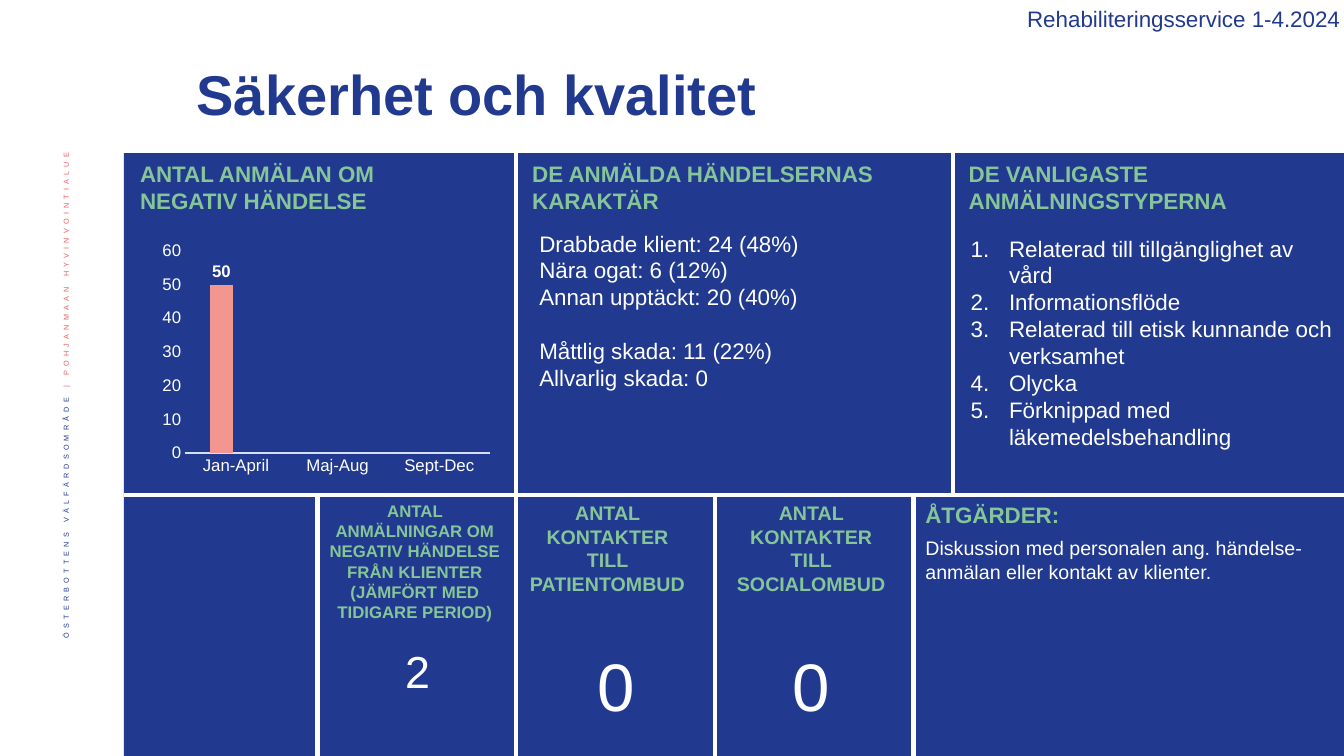
from dataclasses import dataclass
from pptx import Presentation
from pptx.chart.data import CategoryChartData as Data
from pptx.dml.color import RGBColor as RGB
from pptx.enum.chart import XL_CHART_TYPE as Kind, XL_LABEL_POSITION as Pos
from pptx.enum.chart import XL_TICK_MARK as Tick
from pptx.enum.shapes import MSO_CONNECTOR as Link, MSO_SHAPE as Shape
from pptx.enum.text import MSO_ANCHOR as Anchor, PP_ALIGN as Align
from pptx.oxml import parse_xml
from pptx.oxml.ns import nsdecls, qn
from pptx.util import Inches, Pt
from lxml.etree import SubElement


@dataclass(frozen=True)
class Theme:
    face: str = "Arial"
    blue: RGB = RGB(0x21, 0x3A, 0x8F)
    green: RGB = RGB(0x85, 0xC5, 0x98)
    white: RGB = RGB(0xFF, 0xFF, 0xFF)
    pink: RGB = RGB(0xF3, 0x96, 0x90)
    red: RGB = RGB(0xEB, 0x5C, 0x5F)
    pale: RGB = RGB(0xD6, 0xDD, 0xF6)
    title: int = 40
    huge: int = 48
    big: int = 32
    body: int = 16
    note: int = 14
    small: int = 12
    tiny: int = 9


T = Theme()
WIDE, HIGH = 13.33, 7.5
LEFT, TOP, MID = 1.23, 1.52, 4.91
STEP = 1.97
COLS = [3.15 + STEP * i for i in range(4)]  # dividers of the lower row
SPLIT = 9.45  # second divider of the upper row


def style(font, size, color, bold=False):
    font.name, font.size, font.bold = T.face, Pt(size), bold
    font.color.rgb = color


def write(slide, box, lines, size, color, bold=False, align=Align.LEFT):
    frame = slide.shapes.add_textbox(*map(Inches, box)).text_frame
    frame.word_wrap = True
    for i, line in enumerate(lines):
        para = frame.paragraphs[0] if i == 0 else frame.add_paragraph()
        para.text, para.alignment = line, align
        style(para.font, size, color, bold)
    return frame


def head(slide, box, line, size=T.body, align=Align.LEFT):
    write(slide, box, [line], size, T.green, True, align)


def rule(slide, x1, y1, x2, y2):
    line = slide.shapes.add_connector(Link.STRAIGHT, *map(Inches, (x1, y1, x2, y2)))
    line.line.color.rgb, line.line.width = T.white, Pt(3)
    SubElement(line._element.spPr, qn("a:effectLst"))


def panel(slide):
    back = slide.shapes.add_shape(
        Shape.RECTANGLE, *map(Inches, (LEFT, TOP, WIDE - LEFT, HIGH - TOP)))
    back.shadow.inherit = False
    back.fill.solid()
    back.fill.fore_color.rgb = T.blue
    back.line.fill.background()
    rule(slide, LEFT, MID, WIDE, MID)
    for x in COLS:
        rule(slide, x, MID, x, HIGH)
    for x in (COLS[1], SPLIT):
        rule(slide, x, TOP, x, MID)


def side(slide, box):
    frame = write(slide, box, [""], T.tiny, T.blue, align=Align.RIGHT)
    frame.vertical_anchor = Anchor.MIDDLE
    frame._txBody.bodyPr.set("vert", "vert270")
    para = frame.paragraphs[0]
    para.line_spacing = 0.9
    for words, color in (("ÖSTERBOTTENS VÄLFÄRDSOMRÅDE ", T.blue),
                         ("| POHJANMAAN HYVINVOINTIALUE", T.red)):
        run = para.add_run()
        run.text = words
        style(run.font, T.tiny, color)
        props = run._r.get_or_add_rPr()
        props.set("baseline", "30000")
        props.set("spc", "300")


def banner(slide):
    title = slide.shapes.title
    title.left, title.top, title.width, title.height = map(Inches, (1.85, 0.47, 9.98, 0.99))
    title.text_frame.text = "Säkerhet och kvalitet"
    title.text_frame.vertical_anchor = Anchor.MIDDLE
    para = title.text_frame.paragraphs[0]
    para.alignment, para.line_spacing = Align.LEFT, 0.9
    style(para.font, T.title, T.blue, True)
    write(slide, (6.67, 0, 6.72, 0.37), ["Rehabiliteringsservice 1-4.2024"],
          T.body, T.blue, align=Align.RIGHT)


def graph(slide, box):
    data = Data()
    data.categories = ["Jan-April", "Maj-Aug", "Sept-Dec"]
    data.add_series("Series 1", [50, None, None])
    data.add_series("Series 2", [None] * 3)
    chart = slide.shapes.add_chart(
        Kind.COLUMN_CLUSTERED, *map(Inches, box), data).chart
    chart.has_legend = chart.has_title = False
    style(chart.font, T.small, T.white)
    for axis in (chart.category_axis, chart.value_axis):
        axis.major_tick_mark = axis.minor_tick_mark = Tick.NONE
        axis.has_major_gridlines = False
        style(axis.tick_labels.font, T.small, T.white)
    base = chart.category_axis.format.line
    base.color.rgb, base.width = T.pale, Pt(0.75)
    scale = chart.value_axis
    scale.format.line.fill.background()
    scale.minimum_scale, scale.maximum_scale, scale.major_unit = 0, 60, 10
    plot = chart.plots[0]
    plot.gap_width, plot.overlap, plot.vary_by_categories = 219, -27, False
    for bars, color, bold in zip(plot.series, (T.pink, T.red), (True, False)):
        bars.format.fill.solid()
        bars.format.fill.fore_color.rgb = color
        tags = bars.data_labels
        tags.show_value, tags.position = True, Pos.OUTSIDE_END
        style(tags.font, T.small, T.white, bold)
    # Fixed inner plot area
    area = chart._chartSpace.chart.plotArea
    for old in area.findall(qn("c:layout")):
        area.remove(old)
    shares = (("x", 0.14), ("y", 0.09), ("w", 0.82), ("h", 0.79))
    modes = "".join(f'<c:{k}Mode val="edge"/>' for k in "xy")
    sizes = "".join(f'<c:{k} val="{v}"/>' for k, v in shares)
    area.insert(0, parse_xml(
        f'<c:layout {nsdecls("c")}><c:manualLayout><c:layoutTarget val="inner"/>'
        f'{modes}{sizes}</c:manualLayout></c:layout>'))


def count(slide, x, y, wide):
    head(slide, (x, y, wide, 0.64), "ANTAL ANMÄLAN OM NEGATIV HÄNDELSE")
    graph(slide, (x + 0.03, y + 0.72, 3.69, 2.54))


def nature(slide, x, y, wide):
    head(slide, (x, y, wide, 0.64), "DE ANMÄLDA HÄNDELSERNAS KARAKTÄR")
    frame = write(slide, (x + 0.07, y + 0.69, 3.61, 1.72), [
        "Drabbade klient: 24 (48%)", "Nära ogat: 6 (12%)",
        "Annan upptäckt: 20 (40%)", "Måttlig skada: 11 (22%)",
        "Allvarlig skada: 0"], T.body, T.white)
    frame.paragraphs[3].space_before = Pt(19)


def common(slide, x, y, wide):
    head(slide, (x, y, wide, 0.64), "DE VANLIGASTE ANMÄLNINGSTYPERNA")
    frame = write(slide, (x + 0.02, y + 0.74, 3.8, 2.83), [
        "Relaterad till tillgänglighet av vård", "Informationsflöde",
        "Relaterad till etisk kunnande och verksamhet", "Olycka",
        "Förknippad med läkemedelsbehandling"], T.body, T.white)
    for para in frame.paragraphs:
        props = para._p.get_or_add_pPr()
        props.set("marL", str(Inches(0.38)))
        props.set("indent", str(Inches(-0.38)))
        props.insert(0, parse_xml(
            f'<a:buAutoNum {nsdecls("a")} type="arabicPeriod"/>'))


def figure(slide, x, wide, label, size, value, large, shift=0):
    head(slide, (x, MID + 0.01, wide, 1.04), label, size, Align.CENTER)
    write(slide, (x + shift, 6.34, STEP, 0.91), [value], large, T.white,
          align=Align.CENTER)


def action(slide, x, y):
    head(slide, (x, y, 4.03, 0.37), "ÅTGÄRDER:")
    write(slide, (x, y + 0.35, 4.25, 0.81),
          ["Diskussion med personalen ang. händelse-anmälan eller kontakt av klienter."],
          T.note, T.white)


def main():
    deck = Presentation()
    deck.slide_width, deck.slide_height = Inches(WIDE), Inches(HIGH)
    slide = deck.slides.add_slide(deck.slide_layouts[5])
    panel(slide)
    side(slide, (0.42, 1.42, 0.52, 5.73))
    banner(slide)
    # Upper row
    count(slide, 1.29, 1.54, 3.11)
    nature(slide, 5.18, 1.54, 4.18)
    common(slide, 9.51, 1.54, 3.57)
    # Lower row
    figure(slide, 3.13, STEP, "ANTAL ANMÄLNINGAR OM NEGATIV HÄNDELSE FRÅN KLIENTER "
           "(JÄMFÖRT MED TIDIGARE PERIOD)", T.small, "2", T.big, 0.03)
    figure(slide, 5.13, 1.79, "ANTAL KONTAKTER TILL PATIENTOMBUD", T.note, "0", T.huge)
    figure(slide, 7.15, 1.79, "ANTAL KONTAKTER TILL SOCIALOMBUD", T.note, "0", T.huge, -0.09)
    action(slide, 9.08, MID + 0.01)
    deck.save("out.pptx")


if __name__ == "__main__":
    main()
